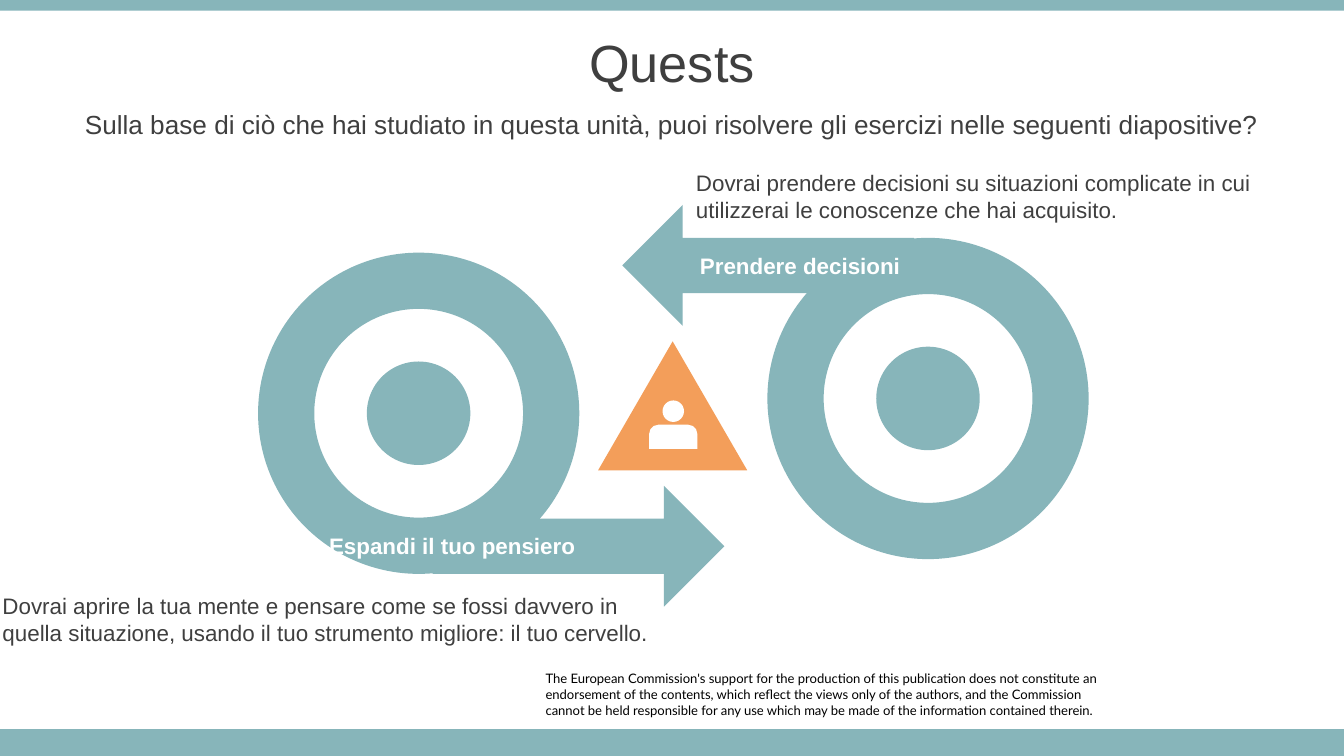
import pptx
import pptx.util
import pptx.dml.color
import pptx.enum.shapes
import pptx.enum.text

Inches = pptx.util.Inches
SHAPE = pptx.enum.shapes.MSO_SHAPE
ALIGN = pptx.enum.text.PP_ALIGN
ANCHOR = pptx.enum.text.MSO_ANCHOR

TEAL, ORANGE, WHITE, GREY, BLACK = "87B5BA", "F39E5A", "FFFFFF", "3F3F3F", "000000"

TITLE = "Quests"
SUBTITLE = ("Sulla base di ciò che hai studiato in questa unità, puoi risolvere "
            "gli esercizi nelle seguenti diapositive?")
DISCLAIMER = [
    "The European Commission's support for the production of this publication does not "
    "constitute an endorsement of the contents, which reflect the views only of the authors, "
    "and the Commission",
    "cannot be held responsible for any use which may be made of the information "
    "contained therein.",
]
QUESTS = [
    {"ring_corner": (1.92, 1.88), "rotation": 0,
     "label": "Espandi il tuo pensiero", "label_box": (2.35, 3.91, 2.56, 0.5),
     "detail": "Dovrai aprire la tua mente e pensare come se fossi davvero in quella "
               "situazione, usando il tuo strumento migliore: il tuo cervello.",
     "detail_box": (-0.08, 4.36, 5.08, 0.71)},
    {"ring_corner": (5.71, 1.77), "rotation": 180,
     "label": "Prendere decisioni", "label_box": (5.11, 1.83, 2.56, 0.5),
     "detail": "Dovrai prendere decisioni su situazioni complicate in cui utilizzerai "
               "le conoscenze che hai acquisito.",
     "detail_box": (5.08, 1.21, 4.72, 0.71)},
]
SLIDE_WIDTH = 10
SLIDE_HEIGHT = SLIDE_WIDTH * 9 / 16
RING, DOT = 2.39, 0.77
ARROW_WIDTH, ARROW_HEIGHT = 2.17, 0.9
ARROW_DX, ARROW_DY = 1.19, 0.99  # from ring centre to arrow centre


def color(hex_code):
    return pptx.dml.color.RGBColor.from_string(hex_code)


def add_solid(shapes, preset, box, fill, adjustments=(), rotation=0):
    shape = shapes.add_shape(preset, *map(Inches, box))
    shape.fill.solid()
    shape.fill.fore_color.rgb = color(fill)
    shape.line.fill.background()
    shape.shadow.inherit = False
    shape.rotation = rotation
    for index, value in enumerate(adjustments):
        shape.adjustments[index] = value
    return shape


def add_centered(shapes, preset, center, size, *style):
    (x, y), (width, height) = center, size
    box = (x - width / 2, y - height / 2, width, height)
    return add_solid(shapes, preset, box, TEAL, *style)


def write(frame, paragraphs, size, fill=GREY, font="Arial", bold=False,
          align=ALIGN.LEFT, anchor=ANCHOR.TOP):
    frame.word_wrap = True
    frame.vertical_anchor = anchor
    frame.text = "\n".join(paragraphs)
    for paragraph in frame.paragraphs:
        paragraph.alignment = align
        paragraph.font.name = font
        paragraph.font.size = pptx.util.Pt(size)
        paragraph.font.bold = bold
        paragraph.font.color.rgb = color(fill)


def add_text(shapes, box, paragraphs, size, **style):
    frame = shapes.add_textbox(*map(Inches, box)).text_frame
    write(frame, paragraphs, size, **style)
    return frame


def add_target(shapes, ring_corner, rotation):
    """Ring, arrow and centre dot, grouped; half a turn also mirrors the arrow's place."""
    group = shapes.add_group_shape().shapes
    side = -1 if rotation else 1
    center = [edge + RING / 2 for edge in ring_corner]
    arrow_center = (center[0] + side * ARROW_DX, center[1] + side * ARROW_DY)
    add_centered(group, SHAPE.DONUT, center, (RING, RING), [0.175], rotation)
    add_centered(group, SHAPE.RIGHT_ARROW, arrow_center,
                 (ARROW_WIDTH, ARROW_HEIGHT), [0.455, 0.5], rotation)
    add_centered(group, SHAPE.OVAL, center, (DOT, DOT))


def main():
    deck = pptx.Presentation()
    deck.slide_width, deck.slide_height = Inches(SLIDE_WIDTH), Inches(SLIDE_HEIGHT)
    slide = deck.slides.add_slide(deck.slide_layouts[5])
    shapes = slide.shapes

    title = shapes.title
    title.left, title.top, title.width, title.height = map(
        Inches, (0, 0.14, SLIDE_WIDTH, 0.63))
    write(title.text_frame, [TITLE], 28, align=ALIGN.CENTER, anchor=ANCHOR.MIDDLE)

    disclaimer = add_text(shapes, (4.06, 4.99, 4.17, 0.35), DISCLAIMER, 7,
                          fill=BLACK, font="Lato")
    disclaimer.margin_left = disclaimer.margin_right = 0
    disclaimer.margin_top = disclaimer.margin_bottom = 0
    for top, height in [(SLIDE_HEIGHT - 0.2, 0.2), (0, 0.08)]:
        add_solid(shapes, SHAPE.RECTANGLE, (0, top, SLIDE_WIDTH, height), TEAL)
    add_text(shapes, (0, 0.77, SLIDE_WIDTH, 0.31), [SUBTITLE], 14,
             align=ALIGN.CENTER, anchor=ANCHOR.MIDDLE)

    for quest in QUESTS:
        add_target(shapes, quest["ring_corner"], quest["rotation"])

    add_solid(shapes, SHAPE.ISOSCELES_TRIANGLE, (4.45, 2.54, 1.11, 0.96), ORANGE)
    person = shapes.add_group_shape().shapes
    add_solid(person, SHAPE.OVAL, (4.93, 2.98, 0.16, 0.16), WHITE)
    add_solid(person, SHAPE.ROUND_2_SAME_RECTANGLE, (4.83, 3.16, 0.36, 0.18), WHITE, [0.39, 0])

    for quest in QUESTS:
        add_text(shapes, quest["detail_box"], [quest["detail"]], 12)
        add_text(shapes, quest["label_box"], [quest["label"]], 12, fill=WHITE, bold=True)

    deck.save("out.pptx")


if __name__ == "__main__":
    main()
